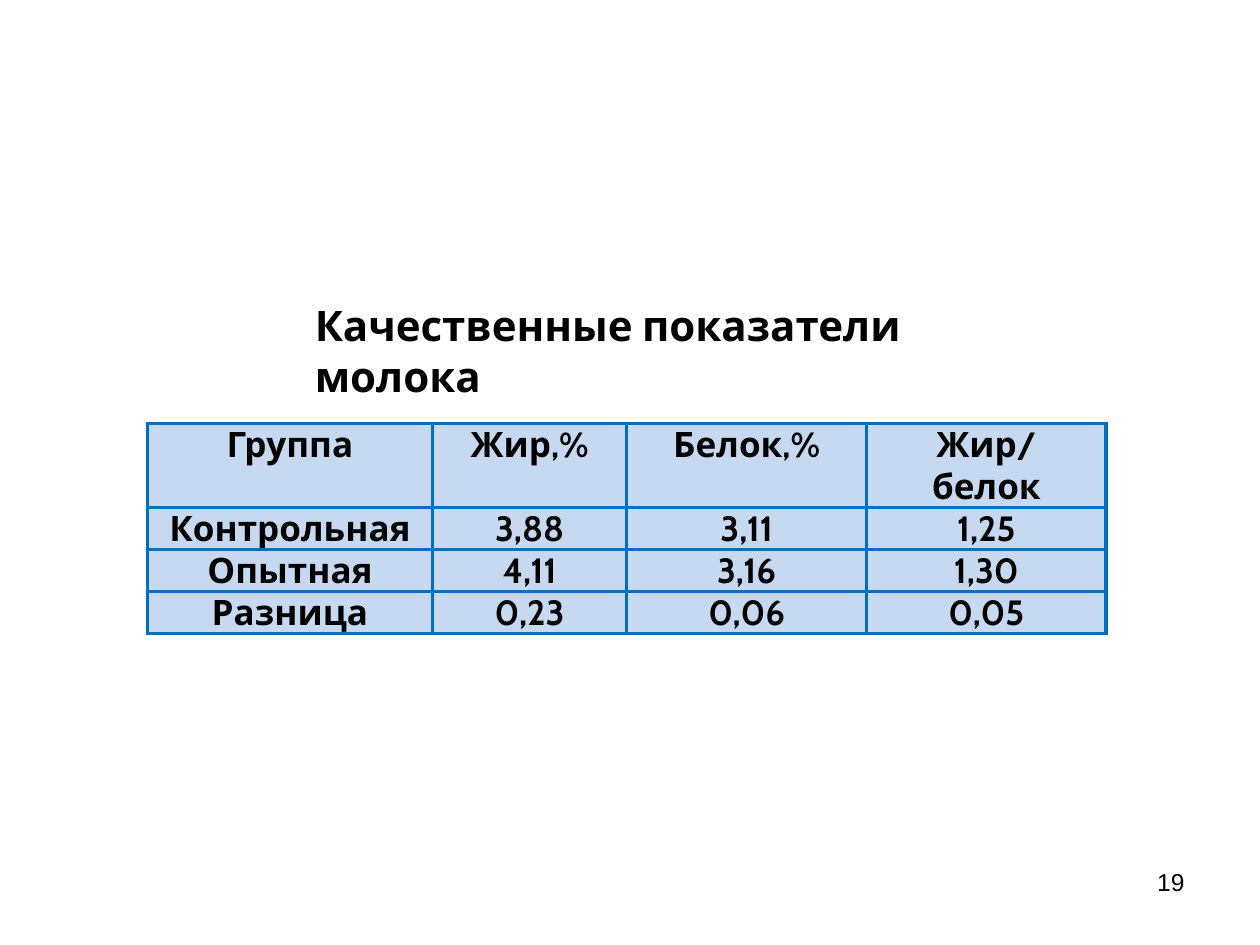
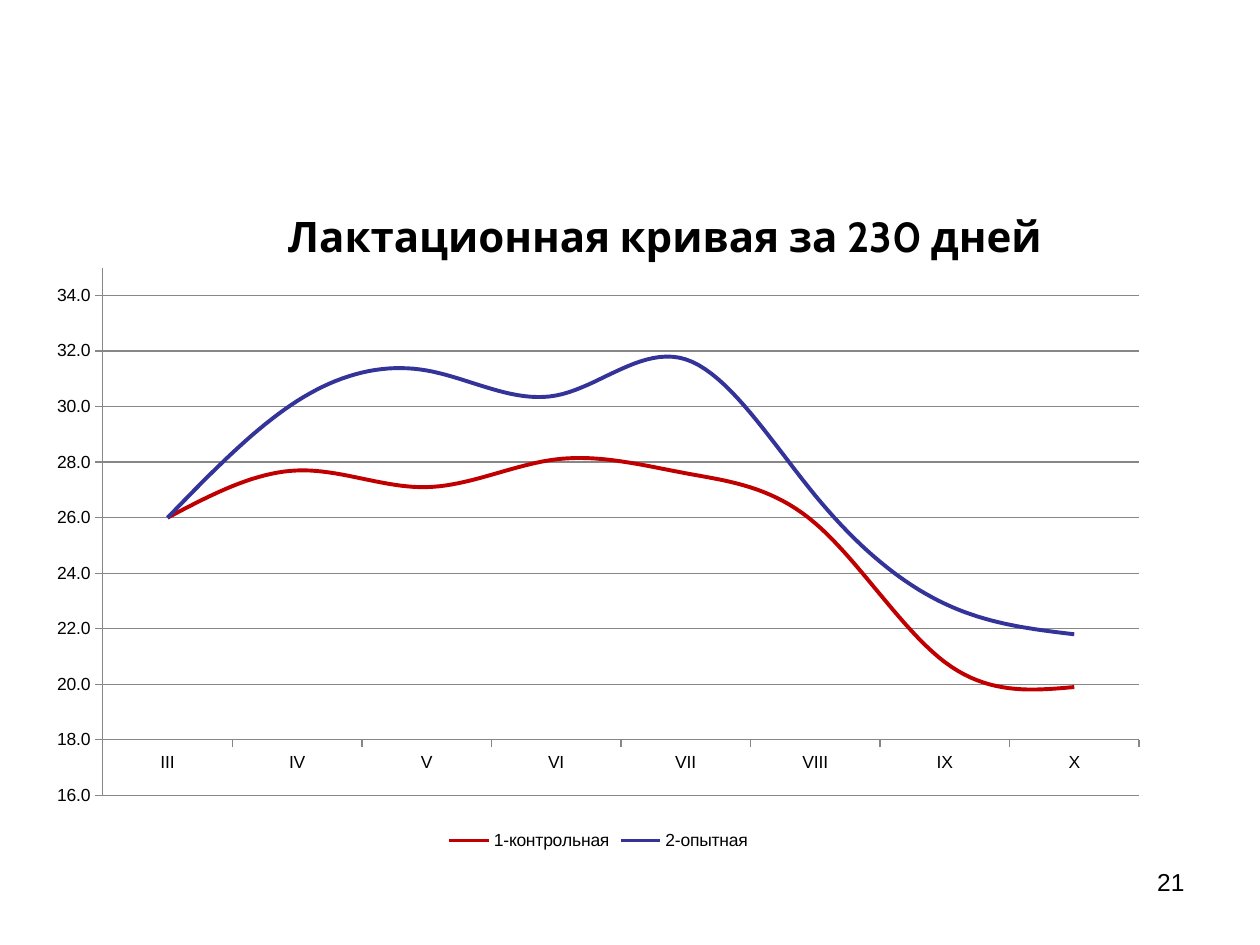
import pptx
import pptx.chart.data
import pptx.dml.color
import pptx.enum.chart
import pptx.enum.text
import pptx.oxml
import pptx.oxml.ns
import pptx.util

WIDE, HIGH = pptx.util.Inches(10), pptx.util.Inches(7.5)
COLS, ROWS = 100, 75
HUES = {"ink": "000000", "cell": "C6D9F1", "edge": "0070C0",
        "grid": "878787", "red": "C00000", "blue": "333399"}
ALIGN = pptx.enum.text.PP_ALIGN
ANCHOR = pptx.enum.text.MSO_ANCHOR
FIT = pptx.enum.text.MSO_AUTO_SIZE
KIND = pptx.enum.chart

FONTS = {
    "title": {"name": "Cabin", "size": pptx.util.Pt(24), "bold": True},
    "table": {"name": "Cabin", "size": pptx.util.Pt(20), "bold": True},
    "foot": {"name": "Arial", "size": pptx.util.Pt(14)},
    "chart": {"name": "Arial", "size": pptx.util.Pt(10)},
}
FOOT = (71.7, 68.3, 23.3, 5.2)
PARTS = (2.26, 1.54, 1.9, 1.9)
GRID = (
    ("Группа", "Жир,%", "Белок,%", "Жир/ белок"),
    ("Контрольная", "3,88", "3,11", "1,25"),
    ("Опытная", "4,11", "3,16", "1,30"),
    ("Разница", "0,23", "0,06", "0,05"),
)
MONTHS = ("III", "IV", "V", "VI", "VII", "VIII", "IX", "X")
CURVES = (
    ("1-контрольная", "red", (26, 27.7, 27.1, 28.1, 27.6, 25.8, 20.8, 19.9)),
    ("2-опытная", "blue", (26, 30.2, 31.3, 30.4, 31.7, 26.8, 22.9, 21.8)),
)
PLOT = {"x": 0.06, "y": 0.02, "w": 0.92, "h": 0.88}


def place(box):
    """Turn grid columns and rows into slide lengths."""
    left, top, width, height = box
    return (int(WIDE * left / COLS), int(HIGH * top / ROWS),
            int(WIDE * width / COLS), int(HIGH * height / ROWS))


def shade(name):
    return pptx.dml.color.RGBColor.from_string(HUES[name])


def assign(item, values):
    for key, value in values.items():
        setattr(item, key, value)


def style(font, name):
    assign(font, FONTS[name])
    font.color.rgb = shade("ink")


def stroke(line, hue, width):
    line.color.rgb = shade(hue)
    line.width = pptx.util.Pt(width)


def write(slide, box, text, font, align, fit=FIT.NONE):
    frame = slide.shapes.add_textbox(*place(box)).text_frame
    assign(frame, {"word_wrap": True, "auto_size": fit})
    para = frame.paragraphs[0]
    para.alignment = align
    run = para.add_run()
    run.text = text
    style(run.font, font)


def frame_page(deck, title, box, align, number):
    """Add a slide with its title and page number."""
    slide = deck.slides.add_slide(deck.slide_layouts[6])
    write(slide, box, title, "title", align, FIT.SHAPE_TO_FIT_TEXT)
    write(slide, FOOT, number, "foot", ALIGN.RIGHT)
    return slide


def edge(cell, width=2.25):
    """Draw the four borders of a cell."""
    props = cell._tc.get_or_add_tcPr()
    for side in "LRTB":
        props.append(pptx.oxml.parse_xml(
            f'<a:ln{side} {pptx.oxml.ns.nsdecls("a")} w="{pptx.util.Pt(width)}">'
            f'<a:solidFill><a:srgbClr val="{HUES["edge"]}"/></a:solidFill>'
            f'</a:ln{side}>'))


def fill_cell(cell, text, anchor):
    pad = pptx.util.Inches(0.11)
    assign(cell, {"margin_left": pad, "margin_right": pad, "margin_top": 0,
                  "margin_bottom": 0, "vertical_anchor": anchor})
    edge(cell)
    cell.fill.solid()
    cell.fill.fore_color.rgb = shade("cell")
    para = cell.text_frame.paragraphs[0]
    para.alignment = ALIGN.CENTER
    run = para.add_run()
    run.text = text
    style(run.font, "table")


def draw_table(slide, box):
    spot = place(box)
    table = slide.shapes.add_table(len(GRID), len(PARTS), *spot).table
    assign(table, {"first_row": False, "horz_banding": False})
    for col, part in zip(table.columns, PARTS):
        col.width = int(spot[2] * part / sum(PARTS))
    for r, row in enumerate(GRID):
        for c, text in enumerate(row):
            low = r > 0 and c > 0
            fill_cell(table.cell(r, c), text, ANCHOR.BOTTOM if low else ANCHOR.TOP)


def fix_plot(chart):
    """Pin the inner plot area to its share of the chart."""
    area = chart._chartSpace.chart.plotArea
    for old in area.findall(pptx.oxml.ns.qn("c:layout")):
        area.remove(old)
    modes = "".join(f'<c:{key}Mode val="edge"/>' for key in "xy")
    sizes = "".join(f'<c:{key} val="{share}"/>' for key, share in PLOT.items())
    area.insert(0, pptx.oxml.parse_xml(
        f'<c:layout {pptx.oxml.ns.nsdecls("c")}><c:manualLayout>'
        f'<c:layoutTarget val="inner"/>{modes}{sizes}'
        '</c:manualLayout></c:layout>'))


def draw_chart(slide, box):
    data = pptx.chart.data.CategoryChartData(number_format="0.0")
    data.categories = MONTHS
    for name, _, values in CURVES:
        data.add_series(name, values)
    chart = slide.shapes.add_chart(KIND.XL_CHART_TYPE.LINE, *place(box), data).chart
    assign(chart, {"has_title": False, "has_legend": True})
    style(chart.font, "chart")
    assign(chart.legend, {"position": KIND.XL_LEGEND_POSITION.BOTTOM,
                          "include_in_layout": False})
    chart.plots[0].vary_by_categories = False
    for series, (_, hue, _) in zip(chart.plots[0].series, CURVES):
        series.smooth = True
        series.marker.style = KIND.XL_MARKER_STYLE.NONE
        stroke(series.format.line, hue, 2.25)
    value = chart.value_axis
    assign(value, {"minimum_scale": 16, "maximum_scale": 35, "major_unit": 2,
                   "has_major_gridlines": True, "crosses_at": 18})
    assign(value.tick_labels, {"number_format": "0.0",
                               "number_format_is_linked": False})
    for axis in (value, chart.category_axis):
        axis.major_tick_mark = KIND.XL_TICK_MARK.OUTSIDE
        stroke(axis.format.line, "grid", 0.75)
    stroke(value.major_gridlines.format.line, "grid", 0.75)
    fix_plot(chart)


def main():
    deck = pptx.Presentation()
    assign(deck, {"slide_width": WIDE, "slide_height": HIGH})
    milk = frame_page(deck, "Качественные показатели молока",
                      (24, 23.3, 52.4, 5), ALIGN.LEFT, "19")
    draw_table(milk, (11.7, 33.6, 76.1, 13.3))
    curve = frame_page(deck, "Лактационная кривая за 230 дней ",
                       (12.5, 16.2, 81.3, 5.1), ALIGN.CENTER, "21")
    draw_chart(curve, (2.8, 20.3, 89.4, 47.6))
    deck.save("out.pptx")


if __name__ == "__main__":
    main()
